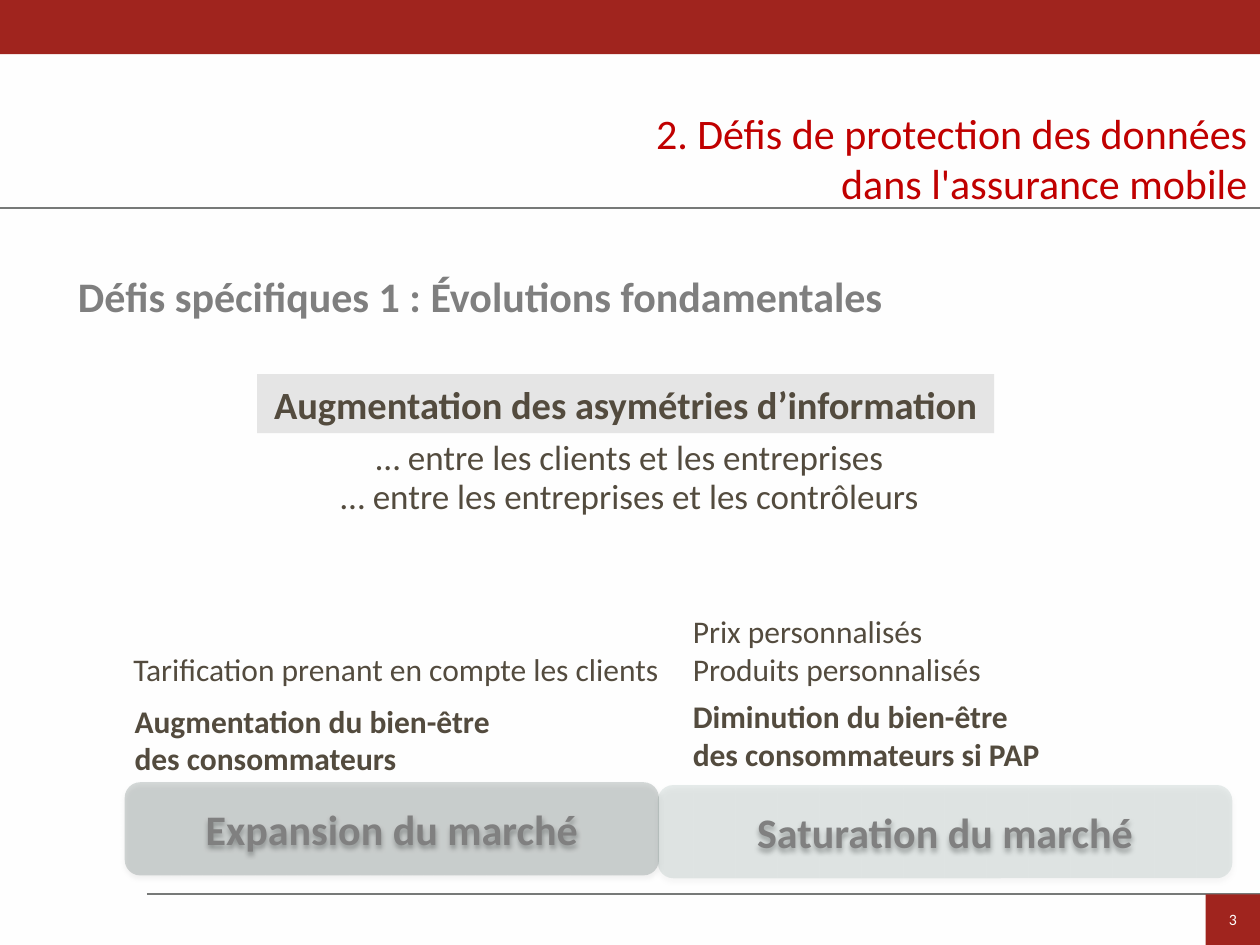
from lxml import etree
from pptx import Presentation
from pptx.dml.color import RGBColor
from pptx.enum.shapes import MSO_CONNECTOR, MSO_SHAPE
from pptx.enum.text import MSO_ANCHOR, PP_ALIGN
from pptx.oxml.ns import qn
from pptx.util import Pt

LEFT, CENTER, RIGHT = PP_ALIGN.LEFT, PP_ALIGN.CENTER, PP_ALIGN.RIGHT
TOP, MIDDLE = MSO_ANCHOR.TOP, MSO_ANCHOR.MIDDLE
RECT, ROUNDED = MSO_SHAPE.RECTANGLE, MSO_SHAPE.ROUNDED_RECTANGLE
STRAIGHT = MSO_CONNECTOR.STRAIGHT
FONT = "Calibri"
COLORS = {
    "background": "FEFEFE",
    "band": "A0241E",
    "rule": "777978",
    "title": "C00000",
    "heading": "7F7F7F",
    "body": "534B3E",
    "panel": "E5E5E5",
    "market": "808080",
    "expansion": "0D2621",
    "saturation": "1A4C42",
    "shadow": "000000",
}


def rgb(name):
    return RGBColor.from_string(COLORS[name])


def write(shape, lines, size, color, bold=False, align=LEFT, anchor=TOP, wrap=True):
    frame = shape.text_frame
    frame.word_wrap = wrap
    frame.vertical_anchor = anchor
    frame.text = "\n".join(lines)
    for paragraph in frame.paragraphs:
        paragraph.alignment = align
        font = paragraph.font
        font.name, font.size, font.bold = FONT, Pt(size), bold
        font.color.rgb = rgb(color)


def add_text(slide, box, lines, size, color="body", **style):
    write(slide.shapes.add_textbox(*map(Pt, box)), lines, size, color, **style)


def add_block(slide, box, fill, preset=RECT):
    block = slide.shapes.add_shape(preset, *map(Pt, box))
    block.shadow.inherit = False
    block.fill.solid()
    block.fill.fore_color.rgb = rgb(fill)
    block.line.fill.background()
    return block


def add_rule(slide, left, right, y):
    rule = slide.shapes.add_connector(STRAIGHT, Pt(left), Pt(y), Pt(right), Pt(y))
    rule.line.color.rgb = rgb("rule")
    rule.line.width = Pt(1.25)
    etree.SubElement(rule._element.spPr, qn("a:effectLst"))


def set_alpha(color_element, percent):
    etree.SubElement(color_element, qn("a:alpha"), val=str(percent * 1000))


def add_soft_shadow(shape):
    effects = shape._element.spPr.find(qn("a:effectLst"))
    shadow = etree.SubElement(
        effects, qn("a:outerShdw"), blurRad=str(Pt(3.1)), dist=str(Pt(1.8)),
        dir="5400000", rotWithShape="0")
    set_alpha(etree.SubElement(shadow, qn("a:srgbClr"), val=COLORS["shadow"]), 35)


def add_frame(slide, width, height):
    add_rule(slide, 84, width, 511)
    add_rule(slide, 0, width, 119)
    add_block(slide, (0, 0, width, 31), "band")
    page_number = add_block(slide, (width - 31, 511, 31, height - 511), "band")
    write(page_number, ["3"], 9, "background", align=CENTER, anchor=MIDDLE)


def add_title(slide, box):
    title = slide.shapes.title
    title.left, title.top, title.width, title.height = map(Pt, box)
    write(title, ["2. Défis de protection des données dans l'assurance mobile"],
          24, "title", align=RIGHT)


def add_asymmetries(slide, box):
    left, top, width, height = box
    panel = add_block(slide, box, "panel")
    write(panel, ["Augmentation des asymétries d’information"], 22, "body",
          bold=True, align=CENTER, anchor=MIDDLE, wrap=False)
    relations = ["… entre les clients et les entreprises",
                 "… entre les entreprises et les contrôleurs"]
    for row, relation in enumerate(relations):
        add_text(slide, (left + 33, top + 31.5 + row * 22.3, 360, 32), [relation], 20,
                 align=CENTER)


def add_market(slide, box, fill, alpha, name, effects, effects_box, welfare, welfare_box):
    left, top, width, height = box
    market = add_block(slide, box, fill, ROUNDED)
    set_alpha(market._element.spPr.find(qn("a:solidFill"))[0], alpha)
    add_soft_shadow(market)
    write(market, [name], 24, "market", bold=True, align=CENTER, anchor=MIDDLE)
    for (dx, dy, w, h), lines, bold in [(effects_box, effects, False),
                                        (welfare_box, [welfare], True)]:
        add_text(slide, (left + dx, top + dy, w, h), lines, 18, bold=bold)


def main():
    presentation = Presentation()
    width, height = 720, 540
    presentation.slide_width, presentation.slide_height = Pt(width), Pt(height)
    slide = presentation.slides.add_slide(presentation.slide_layouts[5])
    slide.background.fill.solid()
    slide.background.fill.fore_color.rgb = rgb("background")

    add_frame(slide, width, height)
    add_title(slide, (320, 57.6, 400, 65.5))
    add_text(slide, (37.5, 151.2, 670, 36),
             ["Défis spécifiques 1 : Évolutions fondamentales"], 24, "heading", bold=True)
    add_market(slide, (71.3, 447, 305.3, 53.3), "expansion", 17, "Expansion du marché",
               ["Tarification prenant en compte les clients"], (-2.2, -79, 329, 29),
               "Augmentation du bien-être\vdes consommateurs", (-1.5, -49.6, 309, 51))
    add_market(slide, (375.9, 448.6, 328.3, 53.3), "saturation", 10, "Saturation du marché",
               ["Prix personnalisés", "Produits personnalisés"], (12.9, -102.3, 181, 51),
               "Diminution du bien-être\vdes consommateurs si PAP", (12.9, -54, 320, 51))
    add_asymmetries(slide, (146.9, 213.8, 421.2, 33.8))
    presentation.save("out.pptx")


if __name__ == "__main__":
    main()
